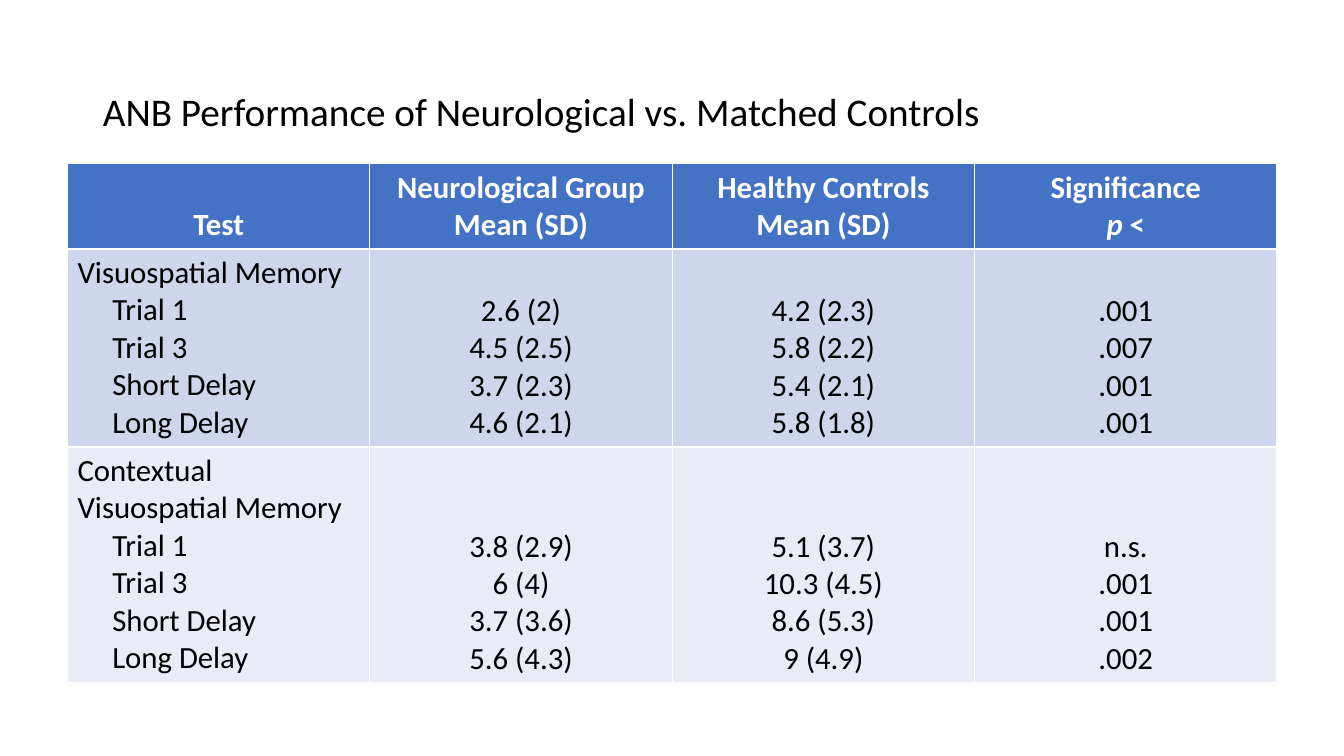
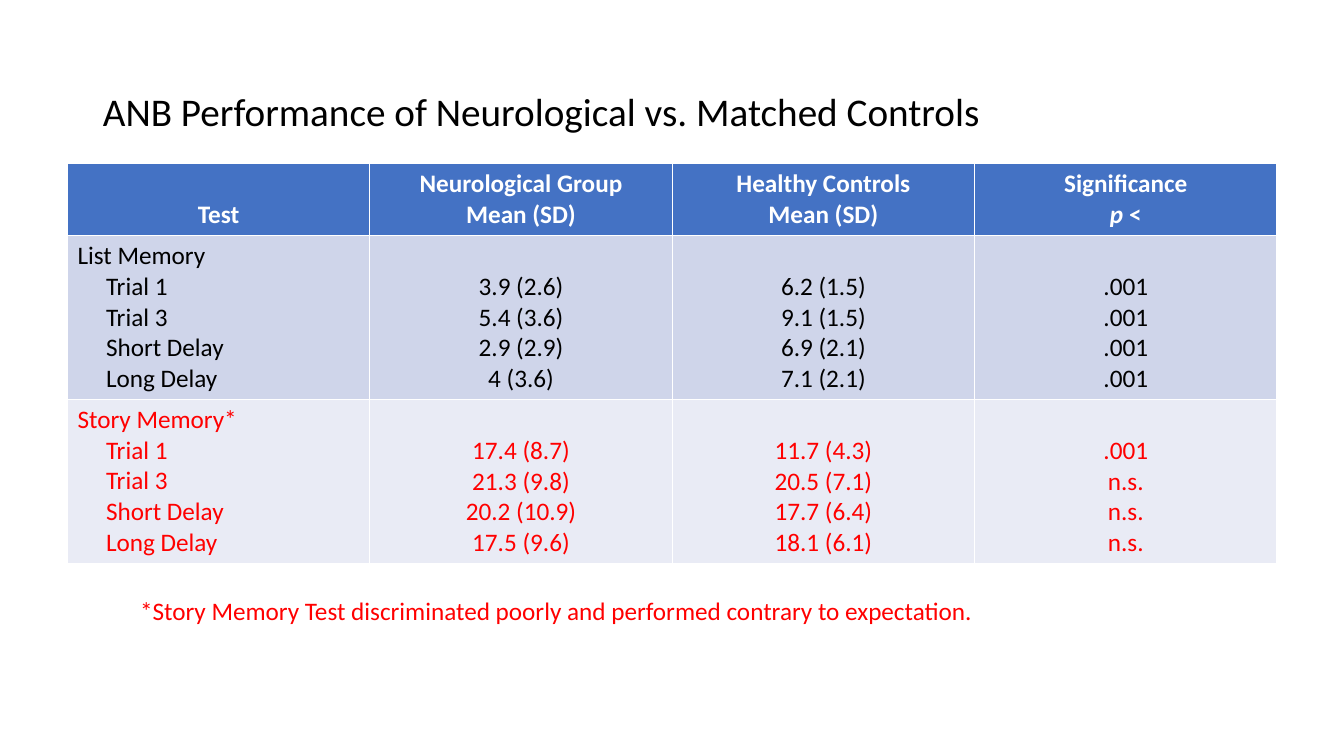
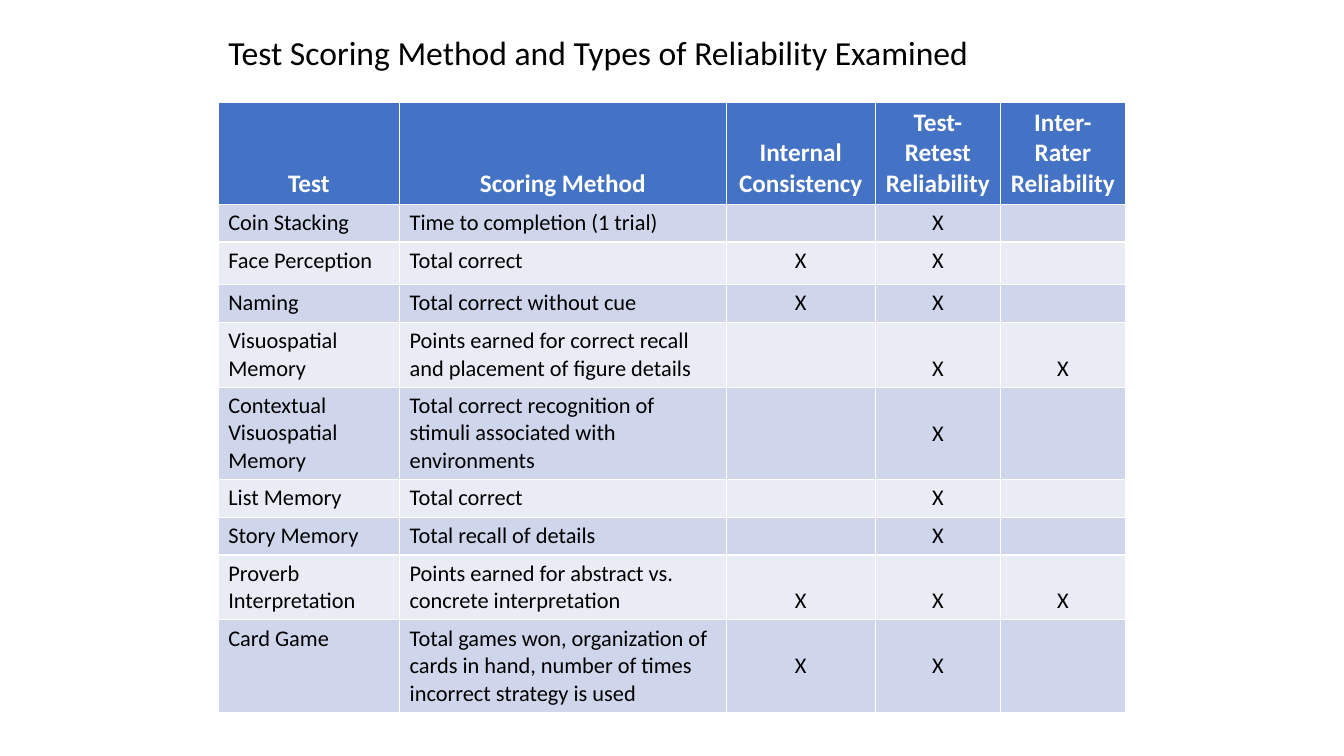
import dataclasses

import lxml.etree
import pptx
import pptx.dml.color
import pptx.enum.text
import pptx.oxml.ns
import pptx.util

Cm = pptx.util.Cm
Align = pptx.enum.text.PP_ALIGN
Anchor = pptx.enum.text.MSO_ANCHOR


@dataclasses.dataclass(frozen=True)
class Theme:
    font: str = "Calibri"
    ink: str = "000000"
    header_ink: str = "FFFFFF"
    alert: str = "FF0000"
    header_fill: str = "4472C4"
    bands: tuple = ("CFD5EA", "E9EBF5")
    title_large: int = 28
    title_small: int = 24
    table_large: int = 22
    table_medium: int = 18
    table_small: int = 16
    indent_ems: float = 1.13


THEME = Theme()


def write_text(frame, text, size, color=THEME.ink, bold=False, align=Align.LEFT,
               spacing=None, indent=0, italic_lead=None):
    """Write one paragraph a line; indent (points) applies after the first line."""
    for number, line in enumerate(text.split("\n")):
        para = frame.add_paragraph() if number else frame.paragraphs[0]
        para.alignment = align
        if spacing:
            para.line_spacing = spacing
        if number and indent:
            para._p.get_or_add_pPr().set("marL", str(int(pptx.util.Pt(indent))))
        if not line:
            lxml.etree.SubElement(para._p, pptx.oxml.ns.qn("a:endParaRPr"),
                                  sz=str(size * 100))
            continue
        pieces = [(line, False)]
        if italic_lead and line.startswith(italic_lead):
            pieces = [(italic_lead, True), (line[len(italic_lead):], False)]
        for piece, italic in pieces:
            span = para.add_run()
            span.text = piece
            span.font.name = THEME.font
            span.font.size = pptx.util.Pt(size)
            span.font.bold = bold
            span.font.italic = italic
            span.font.color.rgb = pptx.dml.color.RGBColor.from_string(color)


TRIALS = "\nTrial 1\nTrial 3\nShort Delay\nLong Delay"
GROUP_HEADER = ("Test", "Neurological Group\nMean (SD)",
                "Healthy Controls\nMean (SD)", "Significance\np <")
GROUP_PAGE = {
    "title": "ANB Performance of Neurological vs. Matched Controls",
    "title_size": THEME.title_large,
    "title_box": (2.34, 1.02, 29.21, 3.68),
    "table_at": (1.7, 4.13),
    "widths": [7.62] * 4,
    "label_columns": 1,
    "anchors": [Anchor.BOTTOM] * 2,
}

pages = [
    GROUP_PAGE | {
        "header_size": THEME.table_large,
        "body_size": THEME.table_large,
        "heights": [2.13, 4.99, 5.94],
        "rows": [
            GROUP_HEADER,
            ("Visuospatial Memory" + TRIALS,
             "2.6 (2)\n4.5 (2.5)\n3.7 (2.3)\n4.6 (2.1)",
             "4.2 (2.3)\n5.8 (2.2)\n5.4 (2.1)\n5.8 (1.8)",
             ".001\n.007\n.001\n.001"),
            ("Contextual Visuospatial Memory" + TRIALS,
             "3.8 (2.9)\n6 (4)\n3.7 (3.6)\n5.6 (4.3)",
             "5.1 (3.7)\n10.3 (4.5)\n8.6 (5.3)\n9 (4.9)",
             "n.s.\n.001\n.001\n.002"),
        ],
    },
    GROUP_PAGE | {
        "header_size": THEME.table_medium,
        "body_size": THEME.table_medium,
        "heights": [1.8, 4.13, 4.13],
        "alert_row": 2,
        "footnote": "*Story Memory Test discriminated poorly and performed "
                    "contrary to expectation.",
        "rows": [
            GROUP_HEADER,
            ("List Memory" + TRIALS,
             "3.9 (2.6)\n5.4 (3.6)\n2.9 (2.9)\n4 (3.6)",
             "6.2 (1.5)\n9.1 (1.5)\n6.9 (2.1)\n7.1 (2.1)",
             ".001\n.001\n.001\n.001"),
            ("Story Memory*" + TRIALS,
             "17.4 (8.7)\n21.3 (9.8)\n20.2 (10.9)\n17.5 (9.6)",
             "11.7 (4.3)\n20.5 (7.1)\n17.7 (6.4)\n18.1 (6.1)",
             ".001\nn.s.\nn.s.\nn.s."),
        ],
    },
    {
        "title": "Test Scoring Method and Types of Reliability Examined",
        "title_size": THEME.title_small,
        "title_box": (5.5, 0.28, 22.86, 2.21),
        "table_at": (5.5, 2.57),
        "widths": [4.57, 8.23, 3.76, 3.15, 3.15],
        "label_columns": 2,
        "anchors": [Anchor.TOP] * 3 + [Anchor.BOTTOM, Anchor.MIDDLE]
                   + [Anchor.TOP] * 2 + [Anchor.BOTTOM, Anchor.MIDDLE],
        "header_size": THEME.table_medium,
        "body_size": THEME.table_small,
        "heights": [2.58, 0.95, 1.07, 0.95, 1.63, 2.33, 0.95, 0.95, 1.63, 2.33],
        "rows": [
            ("Test", "Scoring Method", "Internal\nConsistency",
             "Test-Retest Reliability", "Inter-Rater Reliability"),
            ("Coin Stacking", "Time to completion (1 trial)", "", "X", ""),
            ("Face Perception", "Total correct", "X", "X", ""),
            ("Naming", "Total correct without cue", "X", "X", ""),
            ("Visuospatial Memory",
             "Points earned for correct recall and placement of figure details",
             "", "X", "X"),
            ("Contextual Visuospatial Memory",
             "Total correct recognition of stimuli associated with environments",
             "", "X", ""),
            ("List Memory", "Total correct", "", "X", ""),
            ("Story Memory", "Total recall of details", "", "X", ""),
            ("Proverb Interpretation",
             "Points earned for abstract vs. concrete interpretation",
             "X", "X", "X"),
            ("Card Game",
             "Total games won, organization of cards in hand, "
             "number of times incorrect strategy is used",
             "X", "X", ""),
        ],
    },
]

deck = pptx.Presentation()
deck.slide_width, deck.slide_height = Cm(33.87), Cm(19.05)
title_only = deck.slide_layouts[5]

for page in pages:
    slide = deck.slides.add_slide(title_only)
    title = slide.shapes.title
    title.left, title.top, title.width, title.height = map(Cm, page["title_box"])
    title.text_frame.auto_size = pptx.enum.text.MSO_AUTO_SIZE.NONE
    title.text_frame.vertical_anchor = Anchor.MIDDLE
    write_text(title.text_frame, page["title"], page["title_size"], spacing=0.9)

    widths, heights = page["widths"], page["heights"]
    table = slide.shapes.add_table(
        len(heights), len(widths), *map(Cm, page["table_at"]),
        Cm(sum(widths)), Cm(sum(heights))).table
    for column, width in zip(table.columns, widths):
        column.width = Cm(width)
    for row, height in zip(table.rows, heights):
        row.height = Cm(height)

    for row_number, texts in enumerate(page["rows"]):
        for column_number, text in enumerate(texts):
            cell = table.cell(row_number, column_number)
            is_label = column_number < page["label_columns"]
            cell.fill.solid()
            if row_number == 0:
                fill = THEME.header_fill
                cell.vertical_anchor = Anchor.BOTTOM
                write_text(cell.text_frame, text, page["header_size"],
                           color=THEME.header_ink, bold=True,
                           align=Align.CENTER, italic_lead="p ")
            else:
                fill = THEME.bands[(row_number - 1) % 2]
                is_alert = row_number == page.get("alert_row")
                size = page["body_size"]
                cell.vertical_anchor = (
                    Anchor.TOP if is_label else page["anchors"][row_number - 1])
                write_text(cell.text_frame, text, size,
                           color=THEME.alert if is_alert else THEME.ink,
                           align=Align.LEFT if is_label else Align.CENTER,
                           indent=size * THEME.indent_ems if is_label else 0)
            cell.fill.fore_color.rgb = pptx.dml.color.RGBColor.from_string(fill)

    if "footnote" in page:
        box = slide.shapes.add_textbox(Cm(3.28), Cm(14.88), Cm(25.55), Cm(1.02))
        box.text_frame.word_wrap = True
        write_text(box.text_frame, page["footnote"], THEME.table_medium,
                   color=THEME.alert)

deck.save("out.pptx")
